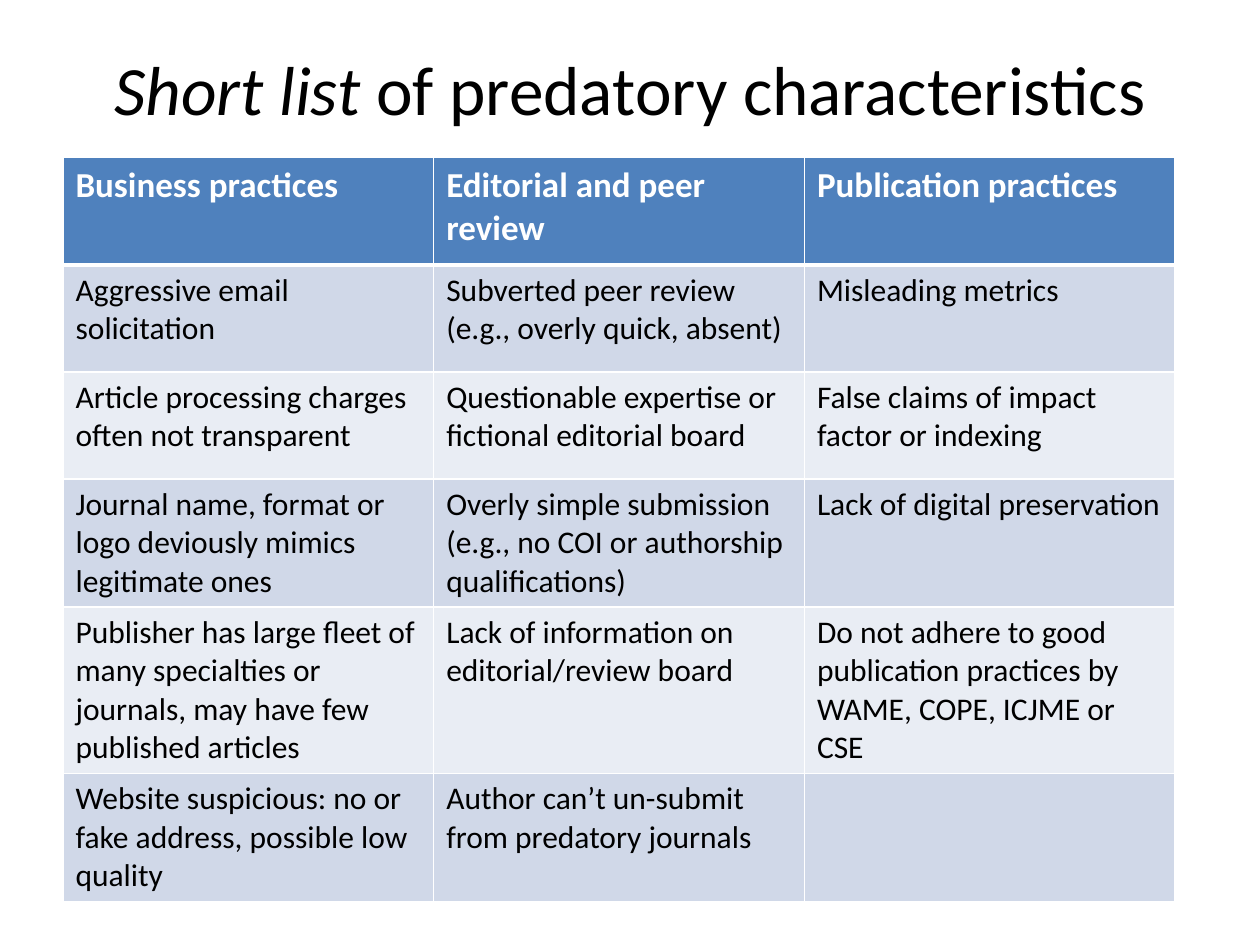
from pptx import Presentation
from pptx.dml.color import RGBColor as Rgb
from pptx.enum.text import MSO_ANCHOR as Anchor, MSO_AUTO_SIZE as AutoSize, PP_ALIGN as Align
from pptx.oxml.ns import qn
from pptx.util import Cm, Pt
from lxml.etree import SubElement

COLOURS = {
    "text": "000000",
    "header": "4F81BD",
    "odd_band": "D0D8E8",
    "even_band": "E9EDF4",
    "white": "FFFFFF",
}

HEADERS = ["Business practices", "Editorial and peer review", "Publication practices"]
CHARACTERISTICS = [
    ["Aggressive email solicitation",
     "Subverted peer review (e.g., overly quick, absent)",
     "Misleading metrics"],
    ["Article processing charges often not transparent",
     "Questionable expertise or fictional editorial board",
     "False claims of impact factor or indexing"],
    ["Journal name, format or logo deviously mimics legitimate ones",
     "Overly simple submission (e.g., no COI or authorship qualifications)",
     "Lack of digital preservation"],
    ["Publisher has large fleet of many specialties or journals, may have few published articles",
     "Lack of information on editorial/review board",
     "Do not adhere to good publication practices by WAME, COPE, ICJME or CSE"],
    ["Website suspicious: no or fake address, possible low quality",
     "Author can’t un-submit from predatory journals",
     ""],
]


def add_text(para, text, size=18, colour="text", bold=False, italic=False, font="Calibri"):
    span = para.add_run()
    span.text = text
    span.font.name = font
    span.font.size = Pt(size)
    span.font.bold = bold
    span.font.italic = italic
    span.font.color.rgb = Rgb.from_string(COLOURS[colour])


class SlideBuilder:
    def __init__(self, deck):
        self.page = deck.slides.add_slide(deck.slide_layouts[5])

    def title(self, parts, left, top, width, height, size):
        box = self.page.shapes.title
        box.left, box.top, box.width, box.height = Cm(left), Cm(top), Cm(width), Cm(height)
        frame = box.text_frame
        frame.word_wrap = True
        frame.auto_size = AutoSize.NONE
        frame.vertical_anchor = Anchor.MIDDLE
        para = frame.paragraphs[0]
        para.alignment = Align.CENTER
        for text, italic in parts:
            add_text(para, text, size=size, italic=italic)

    def table(self, headers, body, left, top, width, heights):
        grid = self.page.shapes.add_table(
            len(heights), len(headers), Cm(left), Cm(top), Cm(width), Cm(sum(heights))).table
        for column in grid.columns:
            column.width = Cm(width / len(headers))
        for row, height in zip(grid.rows, heights):
            row.height = Cm(height)
        for i, texts in enumerate([headers] + body):
            band = "header" if i == 0 else "odd_band" if i % 2 else "even_band"
            for j, text in enumerate(texts):
                cell = grid.cell(i, j)
                # The rule under the header is heavier than the others
                self.borders(cell, L=1, R=1, T=3 if i == 1 else 1, B=3 if i == 0 else 1)
                cell.fill.solid()
                cell.fill.fore_color.rgb = Rgb.from_string(COLOURS[band])
                para = cell.text_frame.paragraphs[0]
                if not text:
                    para.font.size = Pt(18)
                elif i == 0:
                    add_text(para, text, size=20, colour="white", bold=True)
                else:
                    add_text(para, text)

    def borders(self, cell, **widths):
        properties = cell._tc.get_or_add_tcPr()
        for side, width in widths.items():
            line = SubElement(properties, qn(f"a:ln{side}"), w=str(Pt(width)))
            fill = SubElement(line, qn("a:solidFill"))
            SubElement(fill, qn("a:srgbClr"), val=COLOURS["white"])


def main():
    deck = Presentation()
    deck.slide_width, deck.slide_height = Cm(25.4), Cm(19.05)
    builder = SlideBuilder(deck)

    # Title
    builder.title([("Short list ", True), ("of predatory characteristics", False)],
                  left=1.27, top=0.76, width=22.86, height=2, size=39.6)

    # Table of characteristics
    builder.table(HEADERS, CHARACTERISTICS, left=1.27, top=3.18, width=22.42,
                  heights=[2.16] * 5 + [2.03])

    deck.save("out.pptx")


if __name__ == "__main__":
    main()
